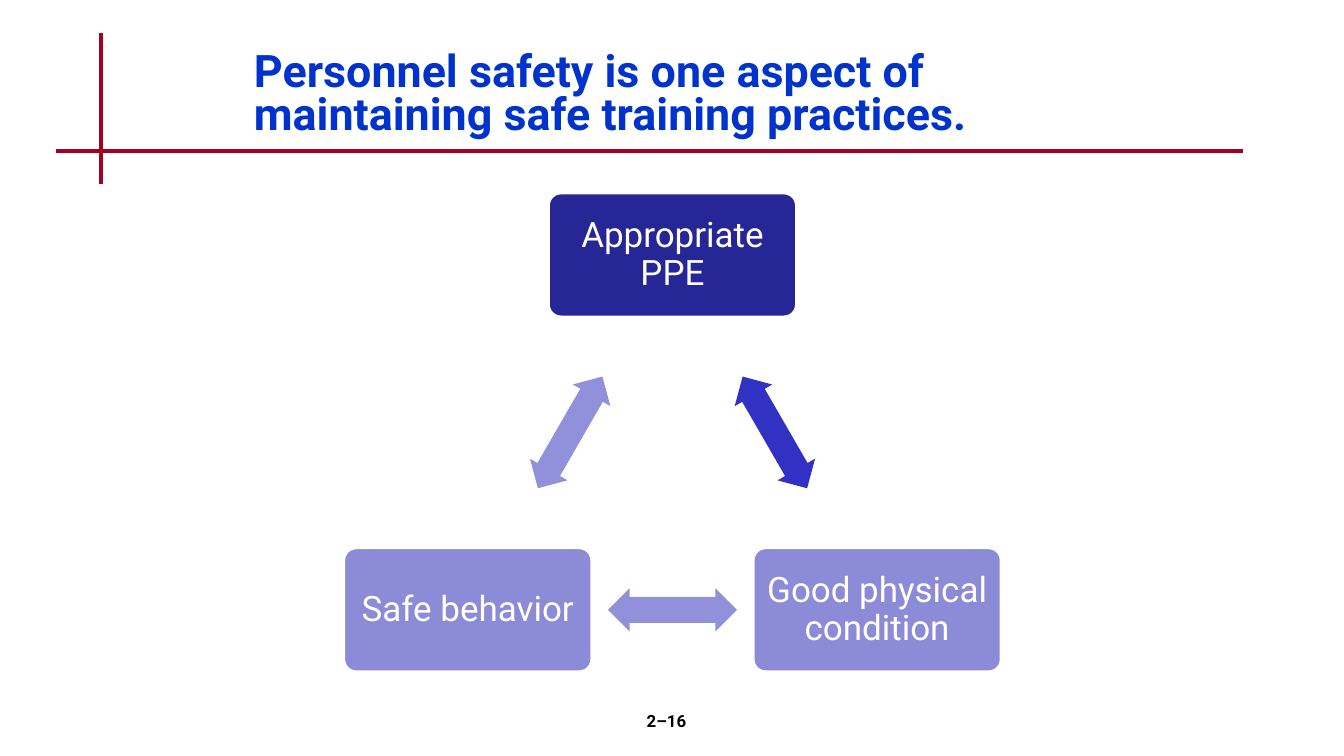
from lxml.etree import SubElement
from pptx import Presentation
from pptx.dml.color import RGBColor
from pptx.enum.shapes import MSO_CONNECTOR, MSO_SHAPE
from pptx.enum.text import MSO_ANCHOR, PP_ALIGN
from pptx.oxml.ns import qn
from pptx.util import Inches, Pt


def color(value):
    return RGBColor.from_string(value)


class SafetySlide:
    font_name = "Roboto"
    rule_color = "A50021"

    def __init__(self, deck):
        self.shapes = deck.slides.add_slide(deck.slide_layouts[6]).shapes

    def fill_text(self, shape, text, size, text_color, bold=False, align=PP_ALIGN.LEFT,
                  anchor=MSO_ANCHOR.TOP, spacing=1.0, inset=(0.1, 0.05)):
        frame = shape.text_frame
        across, down = map(Inches, inset)
        frame_format = {"word_wrap": True, "vertical_anchor": anchor,
                        "margin_left": across, "margin_right": across,
                        "margin_top": down, "margin_bottom": down}
        for name, value in frame_format.items():
            setattr(frame, name, value)
        para = frame.paragraphs[0]
        para.alignment = align
        para.line_spacing = spacing
        span = para.add_run()
        span.text = text
        for name, value in {"name": self.font_name, "size": Pt(size), "bold": bold}.items():
            setattr(span.font, name, value)
        span.font.color.rgb = color(text_color)

    def text(self, left, top, width, height, text, size, text_color, **style):
        box = self.shapes.add_textbox(*map(Inches, (left, top, width, height)))
        self.fill_text(box, text, size, text_color, **style)

    def rule(self, *ends):
        line = self.shapes.add_connector(MSO_CONNECTOR.STRAIGHT, *map(Inches, ends))
        line.line.color.rgb = color(self.rule_color)
        line.line.width = Pt(3)
        SubElement(line._element.spPr, qn("a:effectLst"))

    def shape(self, kind, center, size, fill, adjustments):
        (x, y), (width, height) = center, size
        shape = self.shapes.add_shape(
            kind, *map(Inches, (x - width / 2, y - height / 2, width, height)))
        shape.shadow.inherit = False
        shape.fill.solid()
        shape.fill.fore_color.rgb = color(fill)
        for index, value in enumerate(adjustments):
            shape.adjustments[index] = value
        return shape

    def card(self, center, text, fill):
        box = self.shape(MSO_SHAPE.ROUNDED_RECTANGLE, center, (2.46, 1.23), fill, [0.1])
        box.line.color.rgb = color("FFFFFF")
        box.line.width = Pt(2)
        self.fill_text(box, text, 25, "FFFFFF", align=PP_ALIGN.CENTER,
                       anchor=MSO_ANCHOR.MIDDLE, spacing=0.9, inset=(0.1, 0.1))

    def arrow(self, start, end, rotation, fill):
        center = [(a + b) / 2 for a, b in zip(start, end)]
        arrow = self.shape(MSO_SHAPE.LEFT_RIGHT_ARROW, center, (1.28, 0.43), fill, [0.6, 0.5])
        arrow.rotation = rotation
        arrow.line.fill.background()


def main():
    deck = Presentation()
    deck.slide_width, deck.slide_height = Inches(13.33), Inches(7.5)
    page = SafetySlide(deck)

    page.rule(1, 0.33, 1, 1.83)
    page.rule(0.56, 1.5, 12.33, 1.5)
    page.text(2.42, 0.33, 9.08, 1.25,
              "Personnel safety is one aspect of maintaining safe training practices.",
              32, "0033CC", bold=True, anchor=MSO_ANCHOR.MIDDLE, spacing=0.8)

    aspects = [
        ((6.67, 2.53), "Appropriate PPE", "262697", "3131C3"),
        ((8.7, 6.05), "Good physical condition", "8B8BD7", "9090DB"),
        ((4.64, 6.05), "Safe behavior", "8B8BD7", "9090DB"),
    ]
    for index, (center, label, card_fill, arrow_fill) in enumerate(aspects):
        next_center = aspects[(index + 1) % len(aspects)][0]
        page.card(center, label, card_fill)
        page.arrow(center, next_center, 60 + 120 * index, arrow_fill)

    page.text(5.22, 7, 2.78, 0.5, "2–16", 12, "000000", bold=True, align=PP_ALIGN.CENTER)
    deck.save("out.pptx")


if __name__ == "__main__":
    main()
